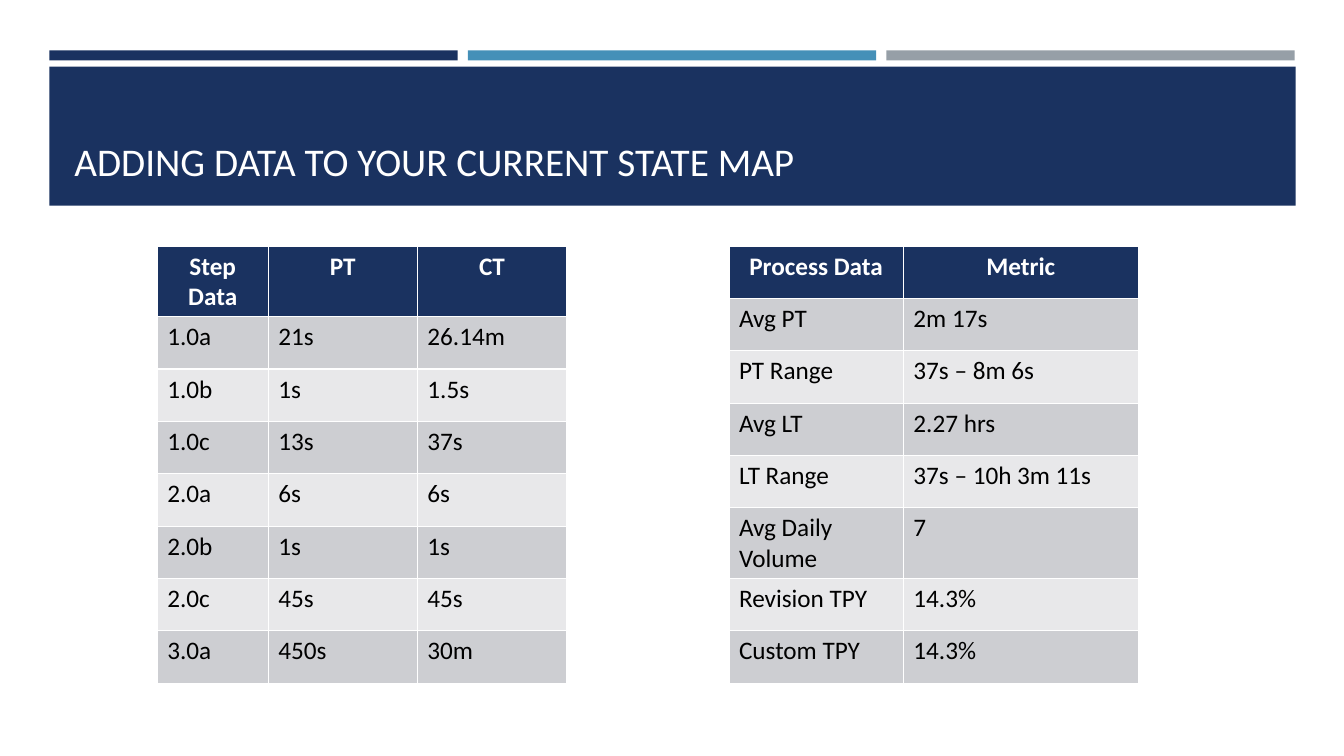
"""Build a slide with two tables of current state map data."""
from pptx import Presentation
from pptx.dml.color import RGBColor
from pptx.enum.shapes import MSO_SHAPE as Shape
from pptx.enum.text import MSO_ANCHOR as Anchor, PP_ALIGN as Align
from pptx.util import Inches, Pt

NAVY, BLUE, GRAY = "1A3260", "4590B8", "969FA7"
WHITE, BLACK = "FFFFFF", "000000"
BANDS = ["E8E8EA", "CDCED2"]
ROW_HEIGHT = 0.52


def paint(fill, color):
    fill.solid()
    fill.fore_color.rgb = RGBColor.from_string(color)


def write(paragraph, text, color, **formats):
    paragraph.text = text
    font = paragraph.runs[0].font
    paint(font.fill, color)
    for name, value in {"name": "Calibri", **formats}.items():
        setattr(font, name, value)


presentation = Presentation()
presentation.slide_width = Inches(13.33)
presentation.slide_height = Inches(7.5)
slide = presentation.slides.add_slide(presentation.slide_layouts[6])

bars = [(0.49 + 4.15 * index, 0.5, 4.05, 0.1, color)
        for index, color in enumerate([NAVY, BLUE, GRAY])]
title_band = (0.49, 0.66, 12.36, 1.38, NAVY)
for *bounds, color in [*bars, title_band]:
    shape = slide.shapes.add_shape(Shape.RECTANGLE, *map(Inches, bounds))
    shape.shadow.inherit = False
    paint(shape.fill, color)
    shape.line.fill.background()

title = slide.shapes.add_textbox(*map(Inches, (0.64, 0.8, 12.06, 1.08)))
title.text_frame.word_wrap = True
title.text_frame.vertical_anchor = Anchor.BOTTOM
write(title.text_frame.paragraphs[0], "ADDING DATA TO YOUR CURRENT STATE MAP",
      WHITE, size=Pt(28))

process_rows = [
    ("Process Data", "Metric"),
    ("Avg PT", "2m 17s"),
    ("PT Range", "37s – 8m 6s"),
    ("Avg LT", "2.27 hrs"),
    ("LT Range", "37s – 10h 3m 11s"),
    ("Avg Daily Volume", "7"),
    ("Revision TPY", "14.3%"),
    ("Custom TPY", "14.3%"),
]
step_rows = [
    ("Step Data", "PT", "CT"),
    ("1.0a", "21s", "26.14m"),
    ("1.0b", "1s", "1.5s"),
    ("1.0c", "13s", "37s"),
    ("2.0a", "6s", "6s"),
    ("2.0b", "1s", "1s"),
    ("2.0c", "45s", "45s"),
    ("3.0a", "450s", "30m"),
]
for left, widths, rows in [(7.23, [1.73, 2.33], process_rows),
                           (1.56, [1.1, 1.48, 1.48], step_rows)]:
    bounds = (left, 2.44, sum(widths), ROW_HEIGHT * len(rows))
    table = slide.shapes.add_table(
        len(rows), len(widths), *map(Inches, bounds)).table
    for column, width in zip(table.columns, widths):
        column.width = Inches(width)
    for row_index, texts in enumerate(rows):
        table.rows[row_index].height = Inches(ROW_HEIGHT)
        header = row_index == 0
        for column_index, text in enumerate(texts):
            cell = table.cell(row_index, column_index)
            paint(cell.fill, NAVY if header else BANDS[row_index % 2])
            paragraph = cell.text_frame.paragraphs[0]
            paragraph.alignment = Align.CENTER if header else Align.LEFT
            write(paragraph, text, WHITE if header else BLACK,
                  size=Pt(18), bold=header)

presentation.save("out.pptx")
